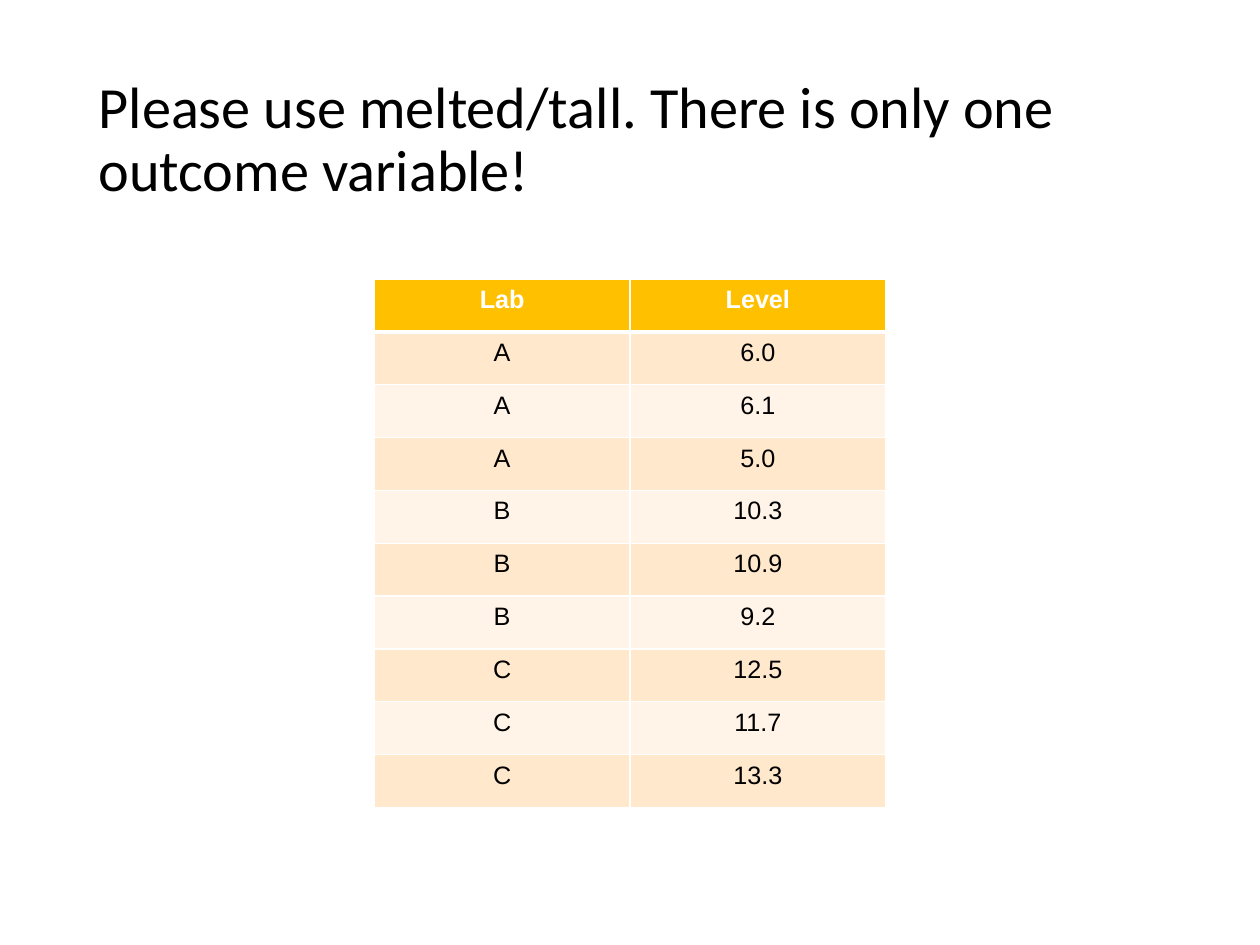
from lxml.etree import SubElement
from pptx import Presentation
from pptx.dml.color import RGBColor
from pptx.enum.text import MSO_ANCHOR, PP_ALIGN
from pptx.oxml.ns import qn
from pptx.util import Inches, Pt

ROWS = [
    ("Lab", "Level"),
    ("A", "6.0"), ("A", "6.1"), ("A", "5.0"),
    ("B", "10.3"), ("B", "10.9"), ("B", "9.2"),
    ("C", "12.5"), ("C", "11.7"), ("C", "13.3"),
]
HEAD, DARK, PALE = "FFC000", "FFE8CC", "FFF4E7"
WHITE, BLACK = "FFFFFF", "000000"


def color(code):
    return RGBColor.from_string(code)


def style(para, name, size, code, bold=False):
    font = para.font
    font.name, font.size, font.bold = name, Pt(size), bold
    font.color.rgb = color(code)


def add_title(slide, text):
    box = slide.shapes.add_textbox(Inches(0.76), Inches(0.44), Inches(9.58), Inches(1.61))
    frame = box.text_frame
    frame.word_wrap = True
    frame.vertical_anchor = MSO_ANCHOR.MIDDLE
    frame.margin_left = frame.margin_right = Inches(0.11)
    frame.margin_top = frame.margin_bottom = Inches(0.11)
    para = frame.paragraphs[0]
    para.text = text
    para.line_spacing = 0.9
    style(para, "Calibri", 37, BLACK)


def add_edges(cell, top, bottom):
    # Borders come before the fill in the cell properties
    props = cell._tc.get_or_add_tcPr()
    for side, width in (("L", 1), ("R", 1), ("T", top), ("B", bottom)):
        line = SubElement(props, qn(f"a:ln{side}"), w=str(Pt(width)))
        fill = SubElement(line, qn("a:solidFill"))
        SubElement(fill, qn("a:srgbClr"), val=WHITE)


def fill_cell(cell, text, row):
    head = row == 0
    add_edges(cell, top=3 if row == 1 else 1, bottom=3 if head else 1)
    cell.fill.solid()
    cell.fill.fore_color.rgb = color(HEAD if head else DARK if row % 2 else PALE)
    cell.margin_left = cell.margin_right = Inches(0.11)
    cell.margin_top = cell.margin_bottom = Inches(0.06)
    para = cell.text_frame.paragraphs[0]
    para.text = text
    para.alignment = PP_ALIGN.CENTER
    style(para, "Arial", 16, WHITE if head else BLACK, head)


def add_grid(slide, rows):
    frame = slide.shapes.add_table(len(rows), len(rows[0]), Inches(3.3), Inches(2.46),
                                   Inches(4.51), Inches(4.66))
    table = frame.table
    for row, texts in enumerate(rows):
        for col, text in enumerate(texts):
            fill_cell(table.cell(row, col), text, row)


def main():
    deck = Presentation()
    deck.slide_width, deck.slide_height = Inches(11.11), Inches(8.33)
    slide = deck.slides.add_slide(deck.slide_layouts[6])

    # Title
    add_title(slide, "Please use melted/tall. There is only one outcome variable!")

    # Lab results
    add_grid(slide, ROWS)

    deck.save("out.pptx")


if __name__ == "__main__":
    main()
